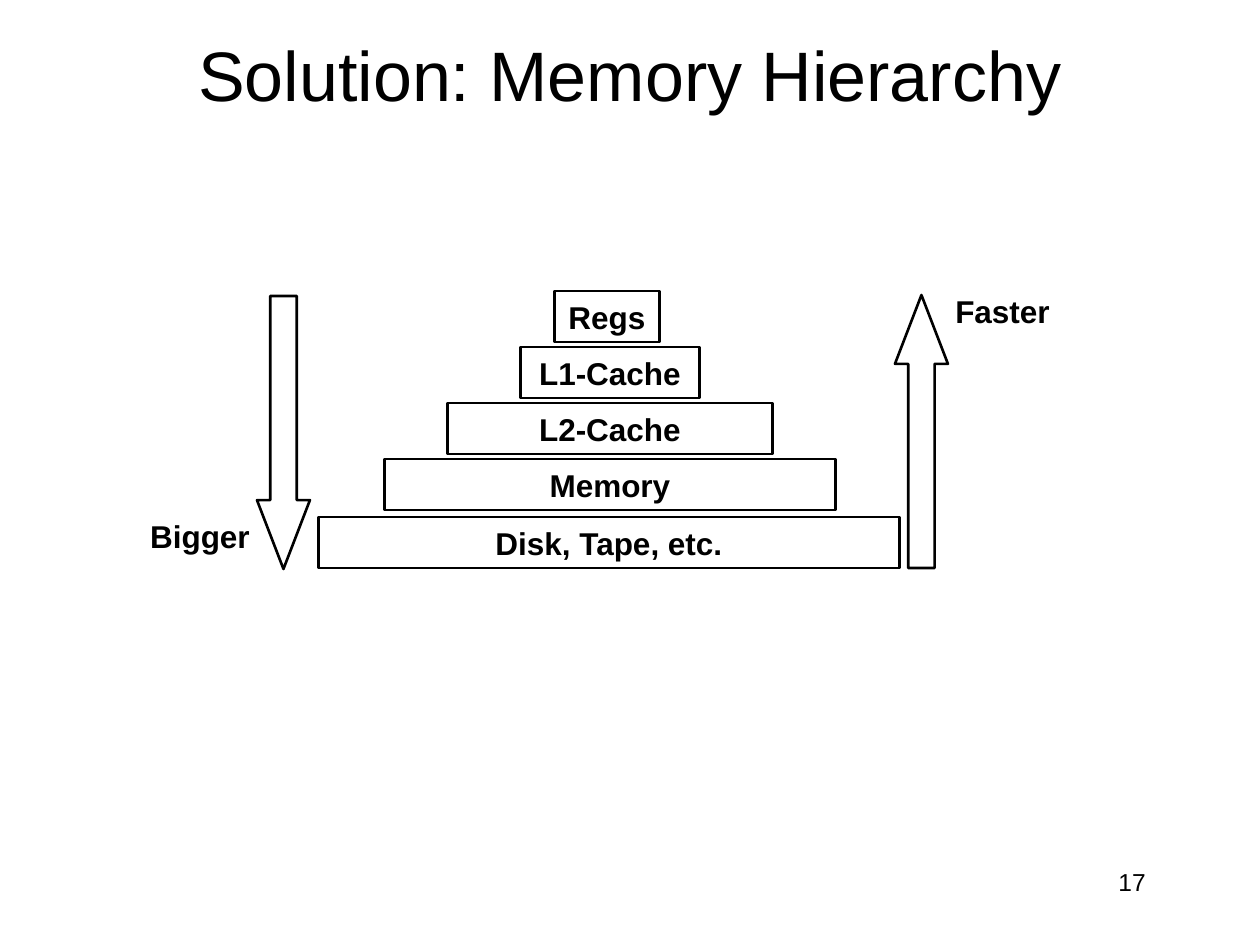
from pptx import Presentation
from pptx.dml.color import RGBColor
from pptx.enum.shapes import MSO_SHAPE
from pptx.enum.text import MSO_ANCHOR, PP_ALIGN
from pptx.util import Pt

BLACK = RGBColor(0, 0, 0)
FONT = "Arial"
PX = 914400 / 126

LEVEL_HEIGHT = 51
LEVELS = [
    ("Regs", 607, 291, 105),
    ("L1-Cache", 610, 347, 179),
    ("L2-Cache", 610, 403, 325),
    ("Memory", 610, 459, 451),
    ("Disk, Tape, etc.", 609, 517, 581),
]
ARROW_WIDTH, ARROW_HEIGHT = 53, 273
ARROWS = [
    (MSO_SHAPE.DOWN_ARROW, 257, 296),
    (MSO_SHAPE.UP_ARROW, 895, 295),
]
TEXTS = [
    ("Solution: Memory Hierarchy", (136, 42, 987, 63), 40, False, PP_ALIGN.CENTER, MSO_ANCHOR.MIDDLE, True),
    ("Bigger", (137, 510, 126, 51), 18, True, PP_ALIGN.CENTER, MSO_ANCHOR.MIDDLE, False),
    ("Faster", (942, 285, 121, 51), 18, True, PP_ALIGN.CENTER, MSO_ANCHOR.MIDDLE, False),
    ("17 ", (903, 861, 262, 63), 14, False, PP_ALIGN.RIGHT, MSO_ANCHOR.TOP, True),
]


def emu(*lengths):
    return [round(length * PX) for length in lengths]


def write(shape, text, size, bold, align, anchor, wrap):
    frame = shape.text_frame
    frame.text = text
    frame.word_wrap = wrap
    frame.vertical_anchor = anchor
    paragraph = frame.paragraphs[0]
    paragraph.alignment = align
    font = paragraph.runs[0].font
    font.name, font.size, font.bold = FONT, Pt(size), bold
    font.color.rgb = BLACK


def add_outline(slide, kind, left, top, width, height):
    shape = slide.shapes.add_shape(kind, *emu(left, top, width, height))
    shape.shadow.inherit = False
    shape.fill.background()
    shape.line.color.rgb = BLACK
    shape.line.width = Pt(1.5)
    return shape


def main():
    presentation = Presentation()
    presentation.slide_width, presentation.slide_height = emu(1260, 945)
    slide = presentation.slides.add_slide(presentation.slide_layouts[6])

    for text, center, top, width in LEVELS:
        level = add_outline(slide, MSO_SHAPE.RECTANGLE, center - width / 2, top, width, LEVEL_HEIGHT)
        write(level, text, 18, True, PP_ALIGN.CENTER, MSO_ANCHOR.MIDDLE, False)

    for kind, left, top in ARROWS:
        arrow = add_outline(slide, kind, left, top, ARROW_WIDTH, ARROW_HEIGHT)
        arrow.adjustments[0] = 0.5
        arrow.adjustments[1] = 1.3

    for text, box, *style in TEXTS:
        write(slide.shapes.add_textbox(*emu(*box)), text, *style)

    presentation.save("out.pptx")


if __name__ == "__main__":
    main()
